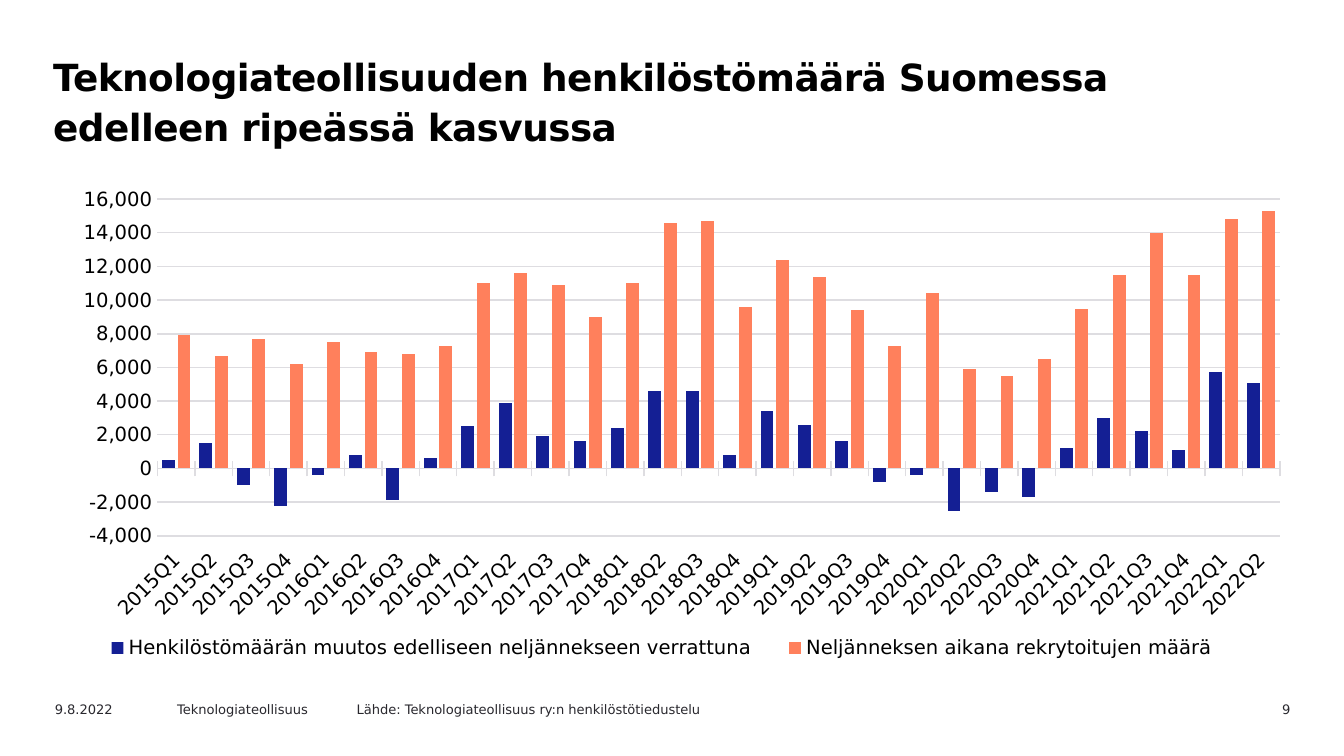
import pptx
import pptx.chart.data
import pptx.dml.color
import pptx.enum.chart
import pptx.enum.text
import pptx.oxml.ns
import pptx.util
from lxml import etree

SCALE = 4572
FONT = "DejaVu Sans"
BLACK = "000000"
DARK = "29282E"
GRID = "DEDDE1"
SERIES = [
    ("Henkilöstömäärän muutos edelliseen neljännekseen verrattuna", "141F94",
     [500, 1500, -1000, -2200, -400, 800, -1900, 600, 2500, 3900,
      1900, 1600, 2400, 4600, 4600, 800, 3400, 2600, 1600, -800,
      -400, -2500, -1400, -1700, 1200, 3000, 2200, 1100, 5700, 5100]),
    ("Neljänneksen aikana rekrytoitujen määrä", "FF805C",
     [7900, 6700, 7700, 6200, 7500, 6900, 6800, 7300, 11000, 11600,
      10900, 9000, 11000, 14600, 14700, 9600, 12400, 11400, 9400, 7300,
      10400, 5900, 5500, 6500, 9500, 11500, 14000, 11500, 14800, 15300]),
]
FOOTER = [
    ("9.8.2022", (62, 1034, 200, 36), "LEFT"),
    ("Teknologiateollisuus", (244, 1034, 284, 36), "LEFT"),
    ("Lähde: Teknologiateollisuus ry:n henkilöstötiedustelu",
     (511, 1034, 650, 36), "LEFT"),
    ("9", (1752, 1034, 188, 36), "RIGHT"),
]


def px(*sizes):
    return [pptx.util.Emu(size * SCALE) for size in sizes]


def color(code):
    return pptx.dml.color.RGBColor.from_string(code)


def style(font, size, code, bold=False):
    font.name = FONT
    font.size = pptx.util.Pt(size)
    font.bold = bold
    font.color.rgb = color(code)


def write(shape, text, size=7, code=DARK, bold=False, align="LEFT",
          lead=None, space=None):
    frame = shape.text_frame
    frame.word_wrap = True
    frame.auto_size = pptx.enum.text.MSO_AUTO_SIZE.NONE
    frame.vertical_anchor = pptx.enum.text.MSO_ANCHOR.TOP
    para = frame.paragraphs[0]
    para.alignment = getattr(pptx.enum.text.PP_ALIGN, align)
    if lead:
        para.line_spacing = pptx.util.Pt(lead)
    run = para.add_run()
    run.text = text
    style(run.font, size, code, bold)
    if space:
        run.font._element.set("spc", str(space))


def add_title(slide, text):
    title = slide.shapes.title
    title.left, title.top, title.width, title.height = px(59, 62, 1746, 142)
    write(title, text, size=20, code=BLACK, bold=True, lead=27, space=-30)


def add_note(slide, text, box, align):
    write(slide.shapes.add_textbox(*px(*box)), text, align=align)


def place(layout, left, top, width, height, inner=False):
    qn = pptx.oxml.ns.qn
    for old in list(layout):
        layout.remove(old)
    manual = etree.SubElement(layout, qn("c:manualLayout"))
    parts = [("xMode", "edge"), ("yMode", "edge"), ("x", left / 1000),
             ("y", top / 1000), ("w", width / 1000), ("h", height / 1000)]
    if inner:
        parts.insert(0, ("layoutTarget", "inner"))
    for name, value in parts:
        etree.SubElement(manual, qn("c:" + name), val=str(value))


def get_layout(parent, index):
    name = pptx.oxml.ns.qn("c:layout")
    layout = parent.find(name)
    if layout is None:
        layout = etree.Element(name)
        parent.insert(index, layout)
    return layout


def style_axes(chart):
    kinds = pptx.enum.chart
    cats, vals = chart.category_axis, chart.value_axis
    for axis in (cats, vals):
        style(axis.tick_labels.font, 10.5, BLACK)
        axis.minor_tick_mark = kinds.XL_TICK_MARK.NONE
    cats.major_tick_mark = kinds.XL_TICK_MARK.CROSS
    cats.tick_label_position = kinds.XL_TICK_LABEL_POSITION.LOW
    cats._element.txPr.bodyPr.set("rot", "-2700000")
    vals.major_tick_mark = kinds.XL_TICK_MARK.NONE
    vals.minimum_scale, vals.maximum_scale = -4000, 16000
    vals.major_unit = 2000
    vals.tick_labels.number_format = "#,##0"
    vals.tick_labels.number_format_is_linked = False
    vals.has_major_gridlines = True
    for line in (cats.format.line, vals.major_gridlines.format.line):
        line.color.rgb = color(GRID)
        line.width = pptx.util.Pt(0.75)
    vals.format.line.fill.background()


def add_legend(chart):
    chart.has_legend = True
    legend = chart.legend
    legend.position = pptx.enum.chart.XL_LEGEND_POSITION.BOTTOM
    legend.include_in_layout = False
    style(legend.font, 10.5, BLACK)
    place(get_layout(legend._element, 1), 35, 915, 930, 65)


def add_bars(slide):
    data = pptx.chart.data.CategoryChartData(number_format="#,##0")
    count = len(SERIES[0][2])
    data.categories = [f"{2015 + i // 4}Q{i % 4 + 1}" for i in range(count)]
    for name, _, values in SERIES:
        data.add_series(name, values)
    kind = pptx.enum.chart.XL_CHART_TYPE.COLUMN_CLUSTERED
    chart = slide.shapes.add_chart(kind, *px(56, 248, 1858, 756), data).chart
    chart.has_title = False
    style(chart.font, 10, DARK)
    plot = chart.plots[0]
    plot.vary_by_categories = False
    plot.gap_width, plot.overlap = 70, -21
    for series, (_, code, _) in zip(plot.series, SERIES):
        series.invert_if_negative = False
        series.format.fill.solid()
        series.format.fill.fore_color.rgb = color(code)
    style_axes(chart)
    area = chart._chartSpace.chart.plotArea
    place(get_layout(area, 0), 96, 64, 899, 663, inner=True)
    add_legend(chart)


def main():
    deck = pptx.Presentation()
    deck.slide_width, deck.slide_height = px(2000, 1125)
    slide = deck.slides.add_slide(deck.slide_layouts[5])
    add_title(slide, "Teknologiateollisuuden henkilöstömäärä Suomessa "
                     "edelleen ripeässä kasvussa")
    for text, box, align in FOOTER:
        add_note(slide, text, box, align)
    add_bars(slide)
    deck.save("out.pptx")


if __name__ == "__main__":
    main()
